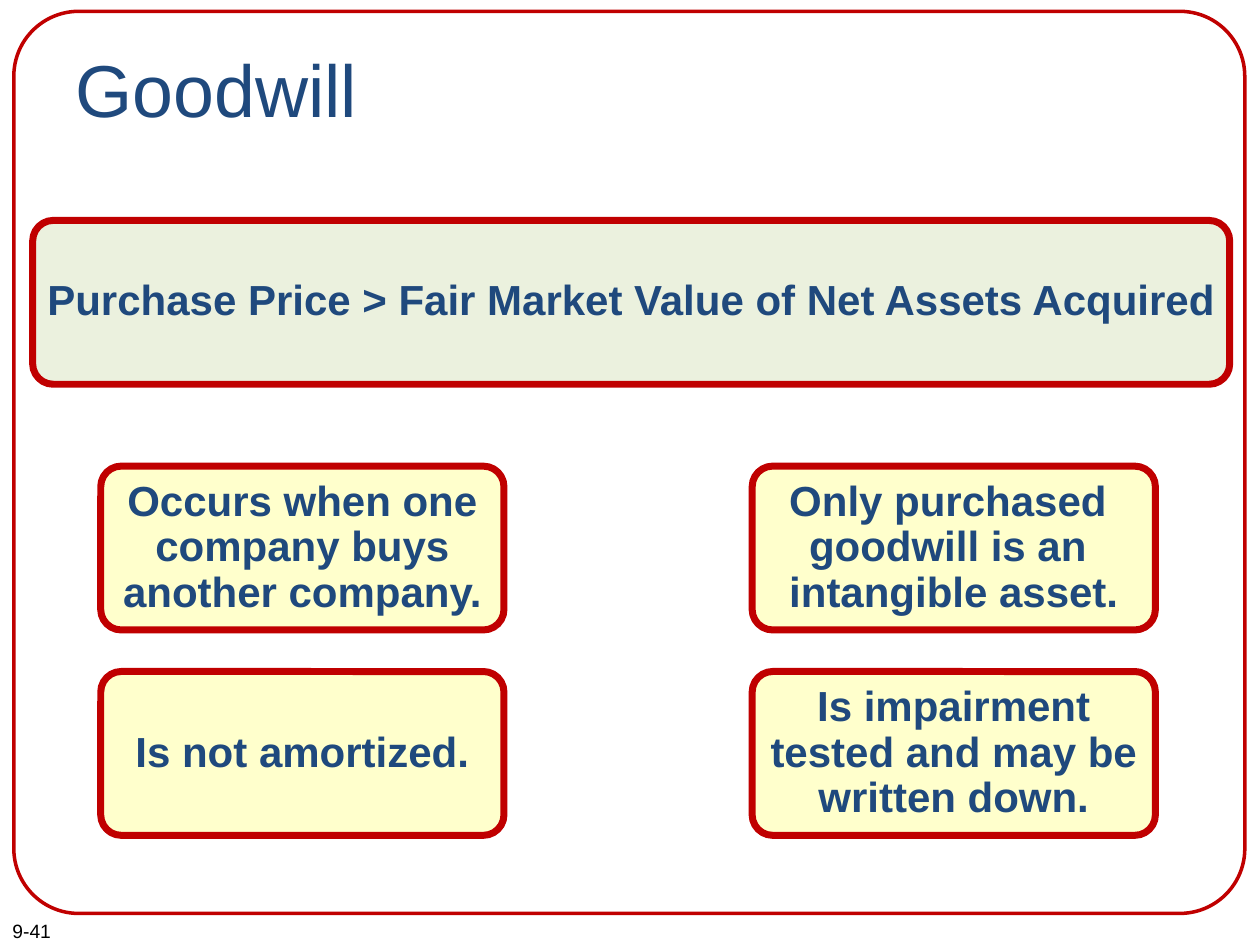
from pptx import Presentation
from pptx.dml.color import RGBColor
from pptx.enum.shapes import MSO_SHAPE
from pptx.enum.text import MSO_ANCHOR, PP_ALIGN
from pptx.util import Pt

PX = 9144  # EMU per px, 100 px to the inch
RED, NAVY, CREAM, SAGE = "C00000", "1F497D", "FFFFCC", "EBF1DE"


def paint(text):
    return RGBColor.from_string(text)


def scale(box):
    return [n * PX for n in box]


def write(para, text, size, color, bold=False):
    for i, line in enumerate(text.split("\n")):
        if i:
            para.add_line_break()
        run = para.add_run()
        run.text = line
        font = run.font
        font.name, font.size, font.bold = "Arial", Pt(size), bold
        font.color.rgb = paint(color)


def label(slide, box, text, size, color):
    frame = slide.shapes.add_textbox(*scale(box)).text_frame
    frame.word_wrap = True
    frame.vertical_anchor = MSO_ANCHOR.TOP
    write(frame.paragraphs[0], text, size, color)


def panel(slide, box, round_by, width, fill=None):
    shape = slide.shapes.add_shape(MSO_SHAPE.ROUNDED_RECTANGLE, *scale(box))
    shape.adjustments[0] = round_by
    shape.shadow.inherit = False
    shape.line.color.rgb = paint(RED)
    shape.line.width = Pt(width)
    if fill:
        shape.fill.solid()
        shape.fill.fore_color.rgb = paint(fill)
    else:
        shape.fill.background()
    return shape


def card(slide, box, text, fill):
    frame = panel(slide, box, 0.125, 4, fill).text_frame
    frame.word_wrap = False
    frame.vertical_anchor = MSO_ANCHOR.MIDDLE
    para = frame.paragraphs[0]
    para.alignment = PP_ALIGN.CENTER
    para.line_spacing = 0.9
    write(para, text, 24, NAVY, True)


def facts(slide, box, texts):
    # Two by two grid, with cards in the corners of the box
    left, top, wide, high = box
    w, h = 320, 130
    for i, text in enumerate(texts):
        row, col = divmod(i, 2)
        spot = (left + col * (wide - w), top + row * (high - h), w, h)
        card(slide, spot, text, CREAM)


def main():
    deck = Presentation()
    deck.slide_width, deck.slide_height = scale((1000, 750))
    slide = deck.slides.add_slide(deck.slide_layouts[6])

    # Frame and page number
    label(slide, (0, 725, 142, 29), "9-41", 11, "000000")
    panel(slide, (11, 9, 977, 716), 0.072, 2)

    # Title
    label(slide, (50, 30, 900, 125), "Goodwill", 42, NAVY)

    # Definition
    card(slide, (26, 175, 950, 130),
         "Purchase Price > Fair Market Value of Net Assets Acquired", SAGE)

    # Facts
    facts(slide, (80, 370, 837, 293), [
        "Occurs when one\ncompany buys\nanother company.",
        "Only purchased \ngoodwill is an \nintangible asset.",
        "Is not amortized.",
        "Is impairment\ntested and may be\nwritten down.",
    ])
    deck.save("out.pptx")


if __name__ == "__main__":
    main()
